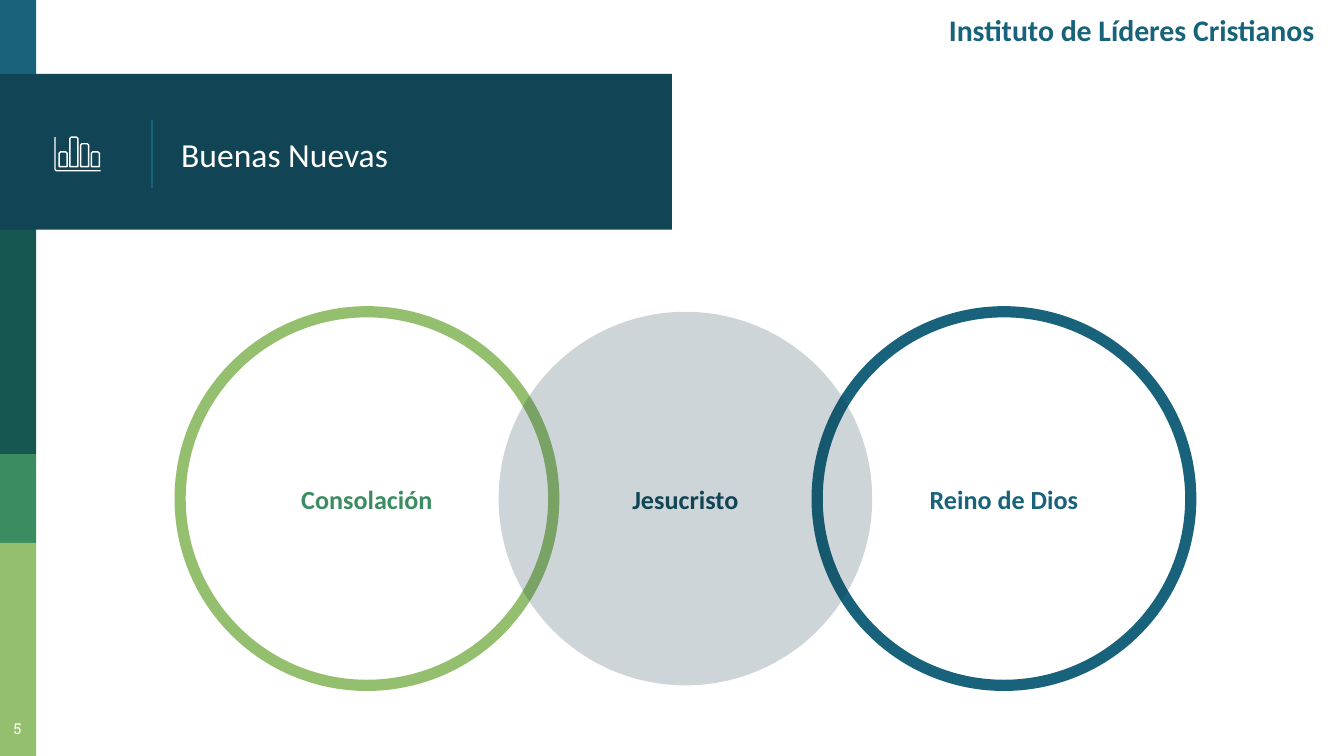
import pptx
import pptx.util
import pptx.dml.color
import pptx.enum.shapes
import pptx.enum.text
import pptx.oxml
import pptx.oxml.ns
import lxml.etree

Inches = pptx.util.Inches
Pt = pptx.util.Pt
ALIGN = pptx.enum.text.PP_ALIGN
ANCHOR = pptx.enum.text.MSO_ANCHOR
SHAPE = pptx.enum.shapes.MSO_SHAPE

TEAL = "18637B"
NAVY = "114454"
GREEN = "3B8D61"
LIME = "94BF6E"
WHITE = "FFFFFF"


def color(value):
    return pptx.dml.color.RGBColor.from_string(value)


def style_shape(shape, fill=None, line=None, width=0.75, opacity=100):
    shape.shadow.inherit = False
    if fill:
        shape.fill.solid()
        shape.fill.fore_color.rgb = color(fill)
        if opacity < 100:
            fill_color = shape.fill._xPr.find(".//" + pptx.oxml.ns.qn("a:srgbClr"))
            alpha = lxml.etree.SubElement(fill_color, pptx.oxml.ns.qn("a:alpha"))
            alpha.set("val", str(opacity * 1000))
    else:
        shape.fill.background()
    if line:
        shape.line.color.rgb = color(line)
        shape.line.width = Pt(width)
    else:
        shape.line.fill.background()


def write_text(shape, text, size, text_color, align=ALIGN.CENTER, bold=False,
               font="Calibri", anchor=ANCHOR.MIDDLE, top_inset=0.1):
    frame = shape.text_frame
    frame.word_wrap = True
    frame.vertical_anchor = anchor
    frame.margin_left = frame.margin_right = frame.margin_bottom = Inches(0.1)
    frame.margin_top = Inches(top_inset)
    paragraph = frame.paragraphs[0]
    paragraph.text = text
    paragraph.alignment = align
    paragraph.font.name = font
    paragraph.font.size = Pt(size)
    paragraph.font.bold = bold
    paragraph.font.color.rgb = color(text_color)


def add_box(slide, left, top, width, height):
    return slide.shapes.add_textbox(Inches(left), Inches(top), Inches(width), Inches(height))


def add_rectangle(slide, left, top, width, height, fill):
    shape = slide.shapes.add_shape(
        SHAPE.RECTANGLE, Inches(left), Inches(top), Inches(width), Inches(height))
    style_shape(shape, fill)


def add_outline(group, points, closed):
    points = [(Inches(x), Inches(y)) for x, y in points]
    builder = group.shapes.build_freeform(*points[0])
    builder.add_line_segments(points[1:], close=closed)
    style_shape(builder.convert_to_shape(), line=WHITE)


def add_side_strip(slide, left, top, width):
    bands = [(0, 0.58, TEAL), (1.7, 1.68, "165751"), (3.38, 0.66, GREEN), (4.04, 1.59, LIME)]
    for offset, height, fill in bands:
        add_rectangle(slide, left, top + offset, width, height, fill)
    number = add_box(slide, left - 0.06, top + 5.27, 0.38, 0.35)
    write_text(number, "5", 8, WHITE, font="Roboto Slab", anchor=ANCHOR.TOP, top_inset=0.13)


def add_chart_icon(slide, left, top, width, height):
    group = slide.shapes.add_group_shape()
    corner = 0.01
    bottom = top + height
    add_outline(group, [(left, top), (left, bottom - corner),
                        (left + corner, bottom), (left + width, bottom)], False)
    base = bottom - 0.03
    bar_width = 0.06
    for index, bar_height in enumerate([0.11, 0.22, 0.17, 0.11]):
        start = left + 0.03 + 0.08 * index
        end = start + bar_width
        peak = base - bar_height
        add_outline(group, [(end, base), (end, peak + corner), (end - corner, peak),
                            (start + corner, peak), (start, peak + corner),
                            (start, base)], True)


def add_title_banner(slide, left, top, width, height):
    add_rectangle(slide, left, top, width, height, NAVY)
    divider = slide.shapes.add_connector(
        pptx.enum.shapes.MSO_CONNECTOR.STRAIGHT,
        Inches(left + 1.13), Inches(top + 0.34), Inches(left + 1.13), Inches(top + 0.85))
    divider.line.color.rgb = color(TEAL)
    divider.line.width = Pt(0.75)
    lxml.etree.SubElement(divider._element.spPr, pptx.oxml.ns.qn("a:effectLst"))
    title = add_box(slide, left + 1.25, top + 0.03, 3.51, 1.12)
    write_text(title, "Buenas Nuevas", 18, WHITE, ALIGN.LEFT, top_inset=0.11)
    add_chart_icon(slide, left + 0.41, top + 0.47, 0.34, 0.25)


def add_circles(slide, left, top, diameter, step):
    circles = [
        (0, "Consolación", GREEN, {"line": LIME, "width": 6}),
        (2, "Reino de Dios", TEAL, {"line": TEAL, "width": 6}),
        (1, "Jesucristo", NAVY, {"fill": "0E3142", "opacity": 20}),
    ]
    for position, label, text_color, style in circles:
        circle = slide.shapes.add_shape(
            SHAPE.OVAL, Inches(left + position * step), Inches(top),
            Inches(diameter), Inches(diameter))
        style_shape(circle, **style)
        write_text(circle, label, 14, text_color, bold=True)


def add_header(slide, left, top, width, height):
    header = add_box(slide, left, top, width, height)
    write_text(header, "Instituto de Líderes Cristianos", 16, TEAL, ALIGN.RIGHT,
               bold=True, anchor=ANCHOR.TOP, top_inset=0.03)


def main():
    presentation = pptx.Presentation()
    presentation.slide_width = Inches(10)
    presentation.slide_height = Inches(10) * 9 // 16
    slide = presentation.slides.add_slide(presentation.slide_layouts[6])
    add_side_strip(slide, 0, 0, 0.27)
    add_title_banner(slide, 0, 0.55, 5, 1.16)
    add_circles(slide, 1.34, 2.32, 2.78, 2.37)
    add_header(slide, 6.18, 0.06, 3.7, 0.61)
    presentation.save("out.pptx")


if __name__ == "__main__":
    main()
